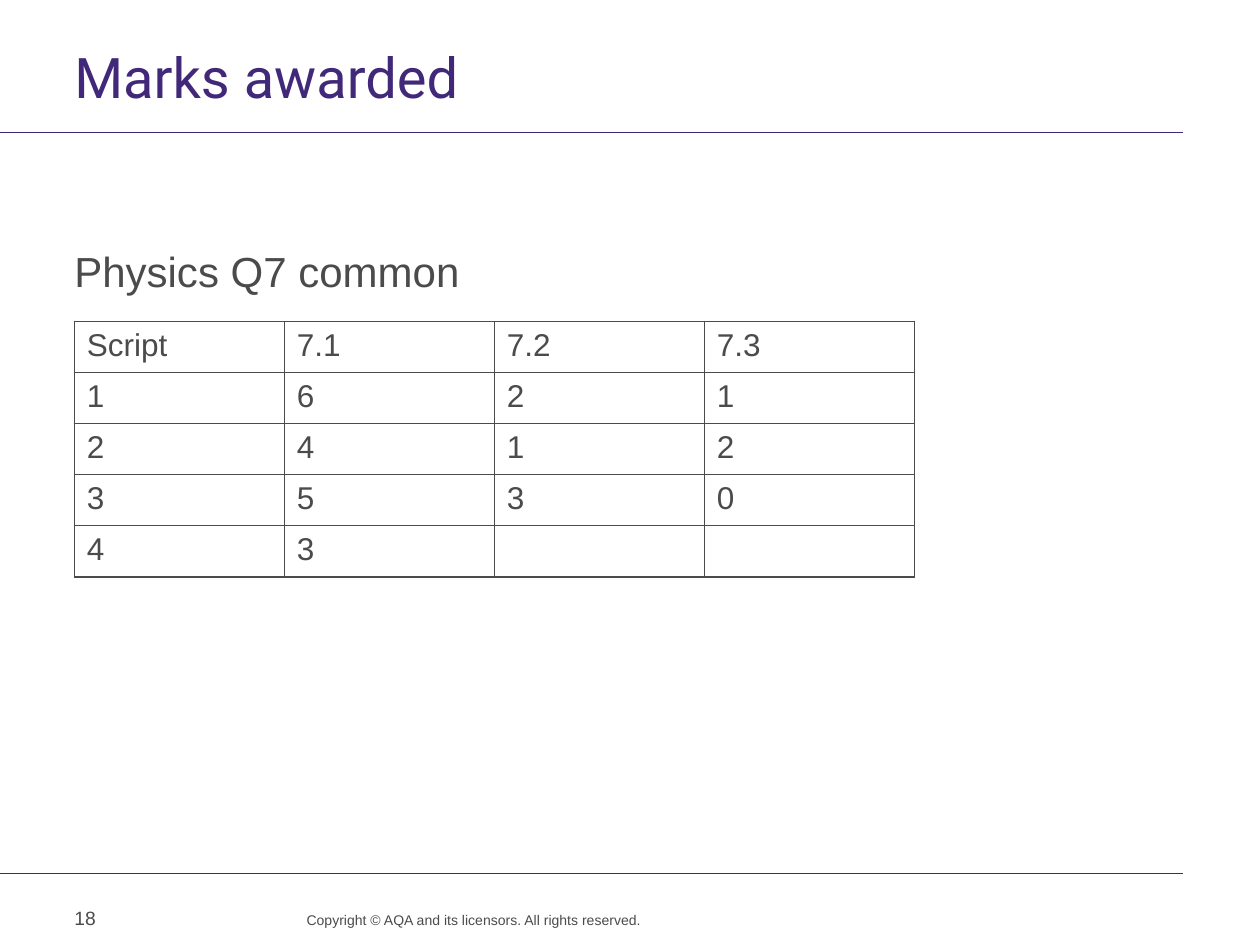
"""Build the slide that lists the marks awarded for Physics Q7."""
from lxml import etree
from pptx import Presentation
from pptx import util as u
from pptx.dml.color import RGBColor
from pptx.enum import shapes, text
from pptx.oxml import ns

PURPLE = RGBColor(0x41, 0x28, 0x78)
GREY = RGBColor(0x4B, 0x4B, 0x4B)
WHITE = RGBColor(0xFF, 0xFF, 0xFF)

LEFT = 42.5
RULE_END = 676
COLUMN_WIDTH = 120
ROW_HEIGHT = 29.2
MARKS = [
    ("Script", "7.1", "7.2", "7.3"),
    ("1", "6", "2", "1"),
    ("2", "4", "1", "2"),
    ("3", "5", "3", "0"),
    ("4", "3", "", ""),
]


def style_font(font, size, color=GREY, name="Arial"):
    font.name = name
    font.size = u.Pt(size)
    font.color.rgb = color


def add_rule(slide, top):
    rule = slide.shapes.add_connector(
        shapes.MSO_CONNECTOR.STRAIGHT, 0, u.Pt(top), u.Pt(RULE_END), u.Pt(top))
    rule.line.color.rgb = PURPLE
    rule.line.width = u.Pt(0.6)
    etree.SubElement(rule._element.spPr, ns.qn("a:effectLst"))


def add_text(slide, box, content, size, color=GREY, name="Arial",
             line_spacing=None, align=text.PP_ALIGN.LEFT,
             anchor=text.MSO_ANCHOR.TOP):
    shape = slide.shapes.add_textbox(*map(u.Pt, box))
    frame = shape.text_frame
    frame.word_wrap = True
    frame.vertical_anchor = anchor
    frame.margin_left = frame.margin_right = 0
    frame.margin_top = frame.margin_bottom = 0
    frame.text = content
    paragraph = frame.paragraphs[0]
    paragraph.alignment = align
    if line_spacing:
        paragraph.line_spacing = u.Pt(line_spacing)
    style_font(paragraph.runs[0].font, size, color, name)


def add_borders(cell):
    properties = cell._tc.get_or_add_tcPr()
    for position, side in enumerate(("lnL", "lnR", "lnT", "lnB")):
        border = etree.Element(ns.qn(f"a:{side}"), w=str(u.Pt(1)))
        fill = etree.SubElement(border, ns.qn("a:solidFill"))
        etree.SubElement(fill, ns.qn("a:srgbClr"), val=str(GREY))
        properties.insert(position, border)


def add_marks_table(slide, top):
    rows, columns = len(MARKS), len(MARKS[0])
    table = slide.shapes.add_table(
        rows, columns, u.Pt(LEFT), u.Pt(top),
        u.Pt(columns * COLUMN_WIDTH), u.Pt(rows * ROW_HEIGHT)).table
    table.first_row = table.horz_banding = False
    for row, marks in zip(table.rows, MARKS):
        row.height = u.Pt(ROW_HEIGHT)
        for cell, mark in zip(row.cells, marks):
            cell.fill.solid()
            cell.fill.fore_color.rgb = WHITE
            add_borders(cell)
            cell.text = mark
            style_font(cell.text_frame.paragraphs[0].font, 18)


def main():
    presentation = Presentation()
    presentation.slide_width = u.Pt(720)
    presentation.slide_height = u.Pt(540)
    slide = presentation.slides.add_slide(presentation.slide_layouts[6])
    for top in (75.6, 499):
        add_rule(slide, top)
    add_text(slide, (LEFT, 34.5, 633.5, 34), "Marks awarded", 32,
             PURPLE, "Roboto", line_spacing=28)
    add_text(slide, (155.5, 520.5, 211, 18.5),
             "Copyright © AQA and its licensors. All rights reserved.", 8,
             line_spacing=10, align=text.PP_ALIGN.RIGHT)
    add_text(slide, (LEFT, 140, 633.5, 32), "Physics Q7 common", 24)
    add_marks_table(slide, 183.6)
    add_text(slide, (LEFT, 510, 47.5, 29), "18", 11,
             anchor=text.MSO_ANCHOR.MIDDLE)
    presentation.save("out.pptx")


if __name__ == "__main__":
    main()
